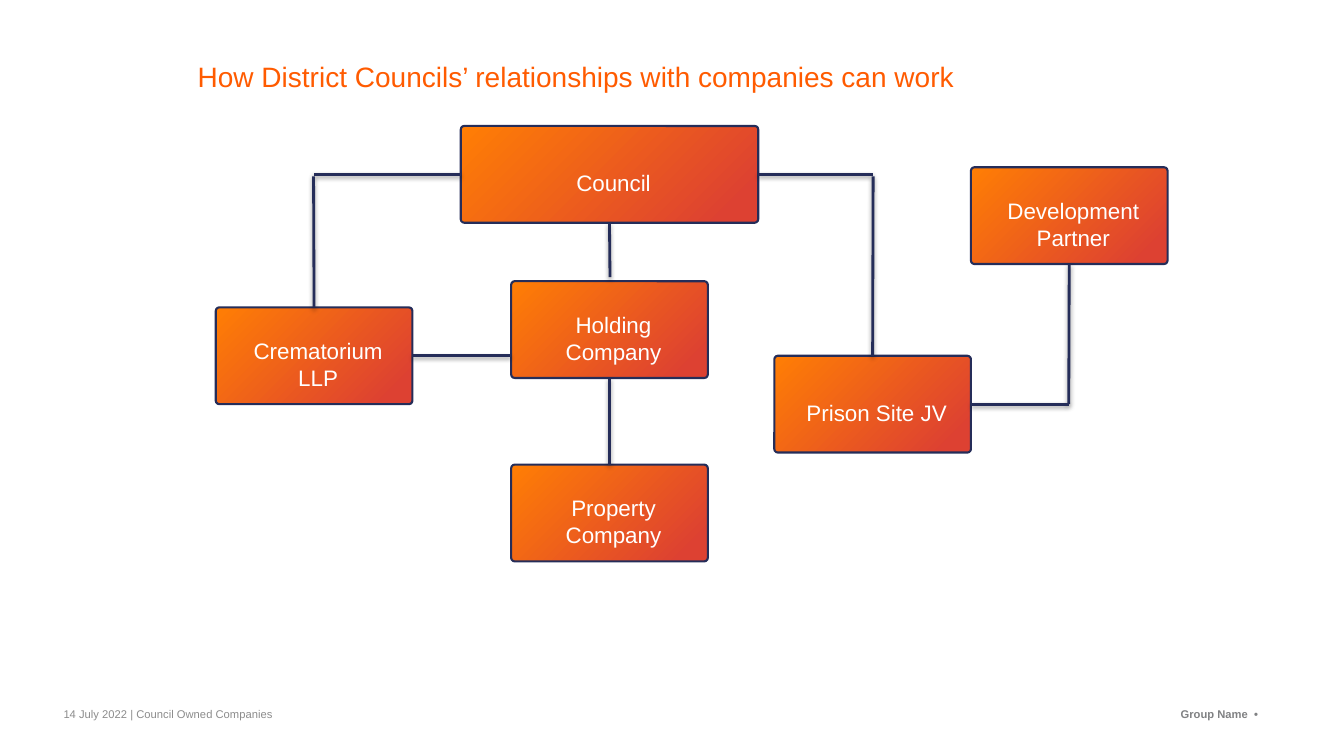
from lxml import etree
from pptx import Presentation
from pptx.dml.color import RGBColor
from pptx.enum.shapes import MSO_CONNECTOR, MSO_SHAPE
from pptx.enum.text import MSO_ANCHOR, PP_ALIGN
from pptx.oxml.ns import qn
from pptx.util import Emu, Pt

PX = 9144  # EMU per px, 100 px to the inch
FONT = "Arial"
COLORS = {
    "title": "FF5B00",
    "gradient_start": "FF7E04",
    "gradient_end": "DD4132",
    "navy": "252D59",
    "white": "FFFFFF",
    "footer": "8C8C8C",
    "brand": "808183",
    "shadow": "000000",
}
STRAIGHT = MSO_CONNECTOR.STRAIGHT
ROUNDED = MSO_SHAPE.ROUNDED_RECTANGLE
TOP, MIDDLE = MSO_ANCHOR.TOP, MSO_ANCHOR.MIDDLE
LEFT, CENTER, RIGHT = PP_ALIGN.LEFT, PP_ALIGN.CENTER, PP_ALIGN.RIGHT
TOP_SIDE, LEFT_SIDE, BOTTOM_SIDE, RIGHT_SIDE = range(4)

# Each organisation: left, top, width, height
ORGANISATIONS = {
    "Council": (457, 125, 295, 96),
    "Crematorium LLP": (214, 305, 195, 96),
    "Holding Company": (507, 279, 195, 96),
    "Development Partner": (963, 166, 195, 96),
    "Prison Site JV": (768, 353, 195, 96),
    "Property Company": (507, 461, 195, 96),
}

# Each end is a point, or an organisation and the side it joins
LINKS = [
    (("Council", BOTTOM_SIDE), (605, 275)),
    (("Holding Company", BOTTOM_SIDE), ("Property Company", TOP_SIDE)),
    (("Council", LEFT_SIDE), (311, 173)),
    ((311, 175), ("Crematorium LLP", TOP_SIDE)),
    (("Crematorium LLP", RIGHT_SIDE), (507, 353)),
    (("Council", RIGHT_SIDE), (866, 173)),
    ((866, 175), ("Prison Site JV", TOP_SIDE)),
    (("Development Partner", BOTTOM_SIDE), (1060, 401)),
    ((1060, 401), ("Prison Site JV", RIGHT_SIDE)),
]


def px(*lengths):
    return [Emu(length * PX) for length in lengths]


def color(name):
    return RGBColor.from_string(COLORS[name])


def write(frame, text, size, color_name, align, anchor, insets=(0, 0, 0, 0), bold=False):
    """Fill a text frame with one paragraph; insets are left, top, right, bottom."""
    frame.word_wrap = True
    frame.vertical_anchor = anchor
    (frame.margin_left, frame.margin_top,
     frame.margin_right, frame.margin_bottom) = px(*insets)
    paragraph = frame.paragraphs[0]
    paragraph.text = text
    paragraph.alignment = align
    font = paragraph.font
    font.name, font.size, font.bold = FONT, Pt(size), bold
    font.color.rgb = color(color_name)


def add_title(slide, box):
    title = slide.shapes.title
    title.left, title.top, title.width, title.height = px(*box)
    write(title.text_frame, "How District Councils’ relationships with companies can work",
          20, "title", LEFT, MIDDLE)


def add_footer(slide, box):
    left, top, width, height = box
    for text, color_name, align, bold in (
        ("14 July 2022 | Council Owned Companies", "footer", LEFT, False),
        ("Group Name  •", "brand", RIGHT, True),
    ):
        note_width = width // 2
        note_left = left if align == LEFT else left + width - note_width
        note = slide.shapes.add_textbox(*px(note_left, top, note_width, height))
        write(note.text_frame, text, 8, color_name, align, TOP, bold=bold)


def add_organisation(slide, name, box):
    organisation = slide.shapes.add_shape(ROUNDED, *px(*box))
    organisation.adjustments[0] = 0.036
    organisation.shadow.inherit = False
    fill = organisation.fill
    fill.gradient()
    fill.gradient_angle = 315
    for stop, position, color_name in zip(
        fill.gradient_stops, (0, 0.9), ("gradient_start", "gradient_end")
    ):
        stop.position = position
        stop.color.rgb = color(color_name)
    organisation.line.color.rgb = color("navy")
    organisation.line.width = Pt(1.5)
    write(organisation.text_frame, name, 16, "white", CENTER, MIDDLE, (16, 16, 8, 0))
    return organisation


def add_soft_shadow(link):
    effects = etree.SubElement(link._element.spPr, qn("a:effectLst"))
    shadow = etree.SubElement(effects, qn("a:outerShdw"), blurRad="40000",
                              dist="20000", dir="5400000", rotWithShape="0")
    tint = etree.SubElement(shadow, qn("a:srgbClr"), val=COLORS["shadow"])
    etree.SubElement(tint, qn("a:alpha"), val="38000")


def add_link(slide, organisations, begin, end):
    ends = [(0, 0) if point[0] in organisations else point for point in (begin, end)]
    link = slide.shapes.add_connector(STRAIGHT, *px(*ends[0], *ends[1]))
    for point, join in ((begin, link.begin_connect), (end, link.end_connect)):
        if point[0] in organisations:
            join(organisations[point[0]], point[1])
    link.line.color.rgb = color("navy")
    link.line.width = Pt(2)
    add_soft_shadow(link)


def add_structure(slide, origin):
    """Draw the organisations and their links, shifted by origin."""
    dx, dy = origin
    organisations = {
        name: add_organisation(slide, name, (left + dx, top + dy, width, height))
        for name, (left, top, width, height) in ORGANISATIONS.items()
    }
    for link in LINKS:
        begin, end = (
            point if point[0] in organisations else (point[0] + dx, point[1] + dy)
            for point in link
        )
        add_link(slide, organisations, begin, end)


def main():
    deck = Presentation()
    deck.slide_width, deck.slide_height = px(1333, 750)
    slide = deck.slides.add_slide(deck.slide_layouts[5])
    add_title(slide, (196, 58, 906, 36))
    add_structure(slide, (0, 0))
    add_footer(slide, (63, 702, 1185, 23))
    deck.save("out.pptx")


if __name__ == "__main__":
    main()
